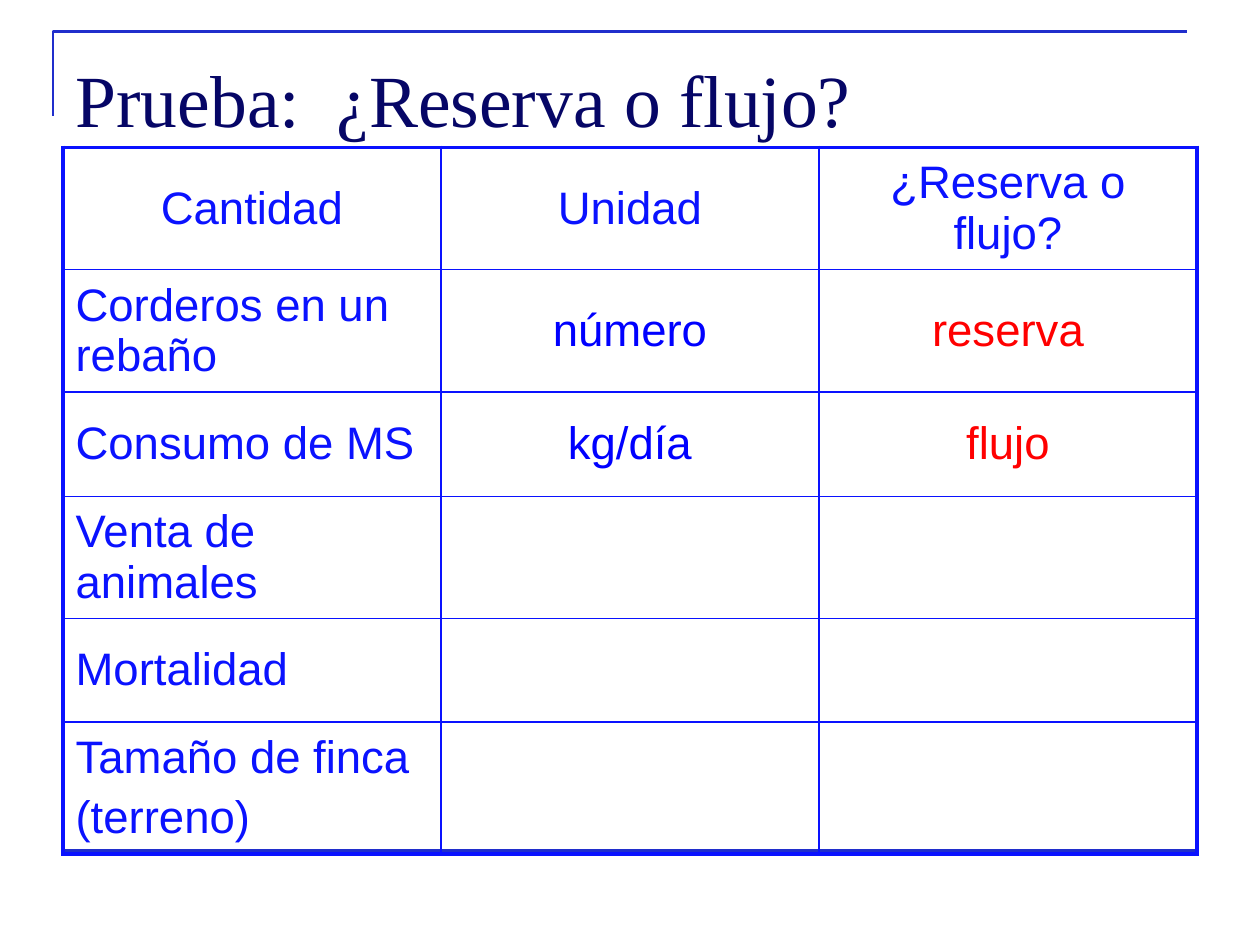
from pptx import Presentation
from pptx.dml.color import RGBColor
from pptx.enum.shapes import MSO_CONNECTOR
from pptx.enum.text import MSO_ANCHOR, PP_ALIGN
from pptx.oxml.ns import qn
from pptx.util import Inches, Pt
from lxml.etree import SubElement

COLORS = {"title": "060666", "rule": "202ECC", "grid": "0A12FF",
          "unit": "0000FF", "answer": "FF0000"}
TITLE = "Prueba:  ¿Reserva o flujo?"
HEADER = ["Cantidad", "Unidad", "¿Reserva o flujo?"]
ROWS = [
    ["Corderos en un rebaño", "número", "reserva"],
    ["Consumo de MS", "kg/día", "flujo"],
    ["Venta de animales", "", ""],
    ["Mortalidad", "", ""],
    ["Tamaño de finca\n(terreno)", "", ""],
]
COLUMN_COLORS = ["grid", "unit", "answer"]
ROW_HEIGHTS = [0.97, 0.97, 0.83, 0.97, 0.82, 1.05]
WIDTH, HEIGHT = 10, 7.5
MARGIN = WIDTH * 0.05
CONTENT_WIDTH = WIDTH - 2 * MARGIN
TABLE_TOP = 1.17
TEXT_SIZE = 26
THICK, THIN = 2.25, 1


def color(name):
    return RGBColor.from_string(COLORS[name])


def add_span(para, text, font, size, color_name):
    span = para.add_run()
    span.text = text
    span.font.name = font
    span.font.size = Pt(size)
    span.font.color.rgb = color(color_name)


def style_rule(shape):
    shape.line.color.rgb = color("rule")
    shape.line.width = Pt(1.5)


def set_borders(cell, widths):
    properties = cell._tc.get_or_add_tcPr()
    for position, (side, width) in enumerate(widths.items()):
        line = SubElement(properties, qn(f"a:{side}"), w=str(Pt(width)))
        fill = SubElement(line, qn("a:solidFill"))
        SubElement(fill, qn("a:srgbClr"), val=COLORS["grid"])
        properties.remove(line)
        properties.insert(position, line)


def fill_cell(cell, text, color_name, align):
    cell.fill.background()
    cell.vertical_anchor = MSO_ANCHOR.MIDDLE
    for index, line in enumerate(text.split("\n")):
        frame = cell.text_frame
        para = frame.add_paragraph() if index else frame.paragraphs[0]
        para.alignment = align
        para.space_before = Pt(TEXT_SIZE * 0.2)
        if line:
            add_span(para, line, "Arial", TEXT_SIZE, color_name)


deck = Presentation()
deck.slide_width, deck.slide_height = Inches(WIDTH), Inches(HEIGHT)
page = deck.slides.add_slide(deck.slide_layouts[5])

# Corner bracket around the title
builder = page.shapes.build_freeform(Inches(0.42), Inches(0.92))
builder.add_line_segments(
    [(Inches(0.42), Inches(0.25)), (Inches(9.42), Inches(0.25))], close=False)
bracket = builder.convert_to_shape()
bracket.shadow.inherit = False
bracket.fill.background()
style_rule(bracket)

# Bottom rule
rule_y = Inches(HEIGHT * 0.9)
rule = page.shapes.add_connector(
    MSO_CONNECTOR.STRAIGHT, Inches(MARGIN), rule_y, Inches(WIDTH - MARGIN), rule_y)
style_rule(rule)
SubElement(rule._element.spPr, qn("a:effectLst"))

# Title
title = page.shapes.title
title.left, title.top = Inches(MARGIN), Inches(0.3)
title.width, title.height = Inches(CONTENT_WIDTH), Inches(1.25)
title.text_frame.vertical_anchor = MSO_ANCHOR.TOP
title.text_frame.margin_top = Inches(0.13)
title_para = title.text_frame.paragraphs[0]
title_para.alignment = PP_ALIGN.LEFT
add_span(title_para, TITLE, "Times New Roman", 42, "title")

# Table: thick outer frame, thin inner grid
content = [HEADER] + ROWS
last_row, last_column = len(content) - 1, len(HEADER) - 1
table = page.shapes.add_table(
    len(content), len(HEADER), Inches(MARGIN), Inches(TABLE_TOP),
    Inches(CONTENT_WIDTH), Inches(sum(ROW_HEIGHTS))).table
for column in table.columns:
    column.width = Inches(CONTENT_WIDTH / len(HEADER))
for r, texts in enumerate(content):
    table.rows[r].height = Inches(ROW_HEIGHTS[r])
    for c, text in enumerate(texts):
        cell = table.cell(r, c)
        left_aligned = r > 0 and c == 0
        fill_cell(cell, text, COLUMN_COLORS[c] if r else "grid",
                  PP_ALIGN.LEFT if left_aligned else PP_ALIGN.CENTER)
        set_borders(cell, {
            "lnL": THICK if c == 0 else THIN,
            "lnR": THICK if c == last_column else THIN,
            "lnT": THICK if r == 0 else THIN,
            "lnB": THICK if r == last_row else THIN,
        })

deck.save("out.pptx")
